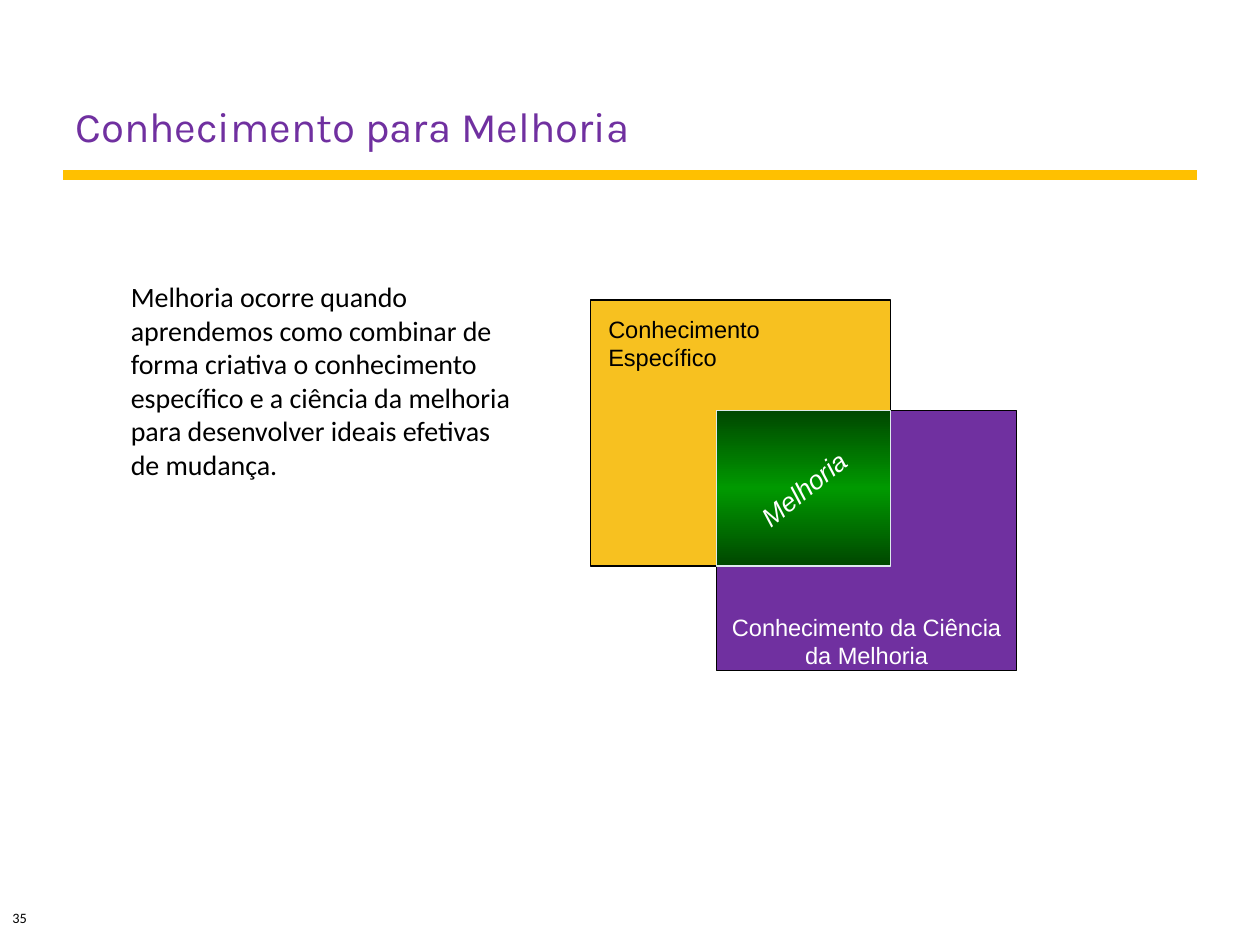
from copy import deepcopy
from dataclasses import dataclass
from typing import Optional

from lxml import etree
from pptx import Presentation
from pptx.dml.color import RGBColor
from pptx.enum.shapes import MSO_CONNECTOR, MSO_SHAPE
from pptx.enum.text import MSO_ANCHOR as Anchor, PP_ALIGN as Align
from pptx.oxml.ns import qn
from pptx.util import Pt

BLACK = RGBColor(0x00, 0x00, 0x00)
WHITE = RGBColor(0xFF, 0xFF, 0xFF)
PURPLE = RGBColor(0x70, 0x30, 0xA0)
AMBER = RGBColor(0xFF, 0xC0, 0x00)
YELLOW = RGBColor(0xF7, 0xC1, 0x20)
DARK_GREEN = RGBColor(0x00, 0x47, 0x00)
GREEN = RGBColor(0x00, 0x99, 0x00)
PALE = RGBColor(0xDD, 0xE9, 0xEC)


@dataclass(frozen=True)
class Box:
    left: float
    top: float
    width: float
    height: float

    def lengths(self) -> tuple:
        return Pt(self.left), Pt(self.top), Pt(self.width), Pt(self.height)

    def overlap(self, other: "Box") -> "Box":
        left, top = max(self.left, other.left), max(self.top, other.top)
        right = min(self.left + self.width, other.left + other.width)
        bottom = min(self.top + self.height, other.top + other.height)
        return Box(left, top, right - left, bottom - top)


@dataclass(frozen=True)
class Label:
    text: str
    box: Box
    size: float
    font: str
    color: RGBColor
    align: Align = Align.LEFT
    anchor: Anchor = Anchor.TOP
    italic: bool = False
    rotation: float = 0


def add_label(slide, label: Label) -> None:
    shape = slide.shapes.add_textbox(*label.box.lengths())
    shape.rotation = label.rotation
    frame = shape.text_frame
    frame.word_wrap = True
    frame.vertical_anchor = label.anchor
    frame.text = label.text
    paragraph = frame.paragraphs[0]
    paragraph.alignment = label.align
    font = paragraph.runs[0].font
    font.name, font.size, font.italic = label.font, Pt(label.size), label.italic
    font.color.rgb = label.color


def add_rectangle(slide, box: Box, line: RGBColor, fill: Optional[RGBColor] = None):
    shape = slide.shapes.add_shape(MSO_SHAPE.RECTANGLE, *box.lengths())
    shape.shadow.inherit = False
    if fill is not None:
        shape.fill.solid()
        shape.fill.fore_color.rgb = fill
    shape.line.color.rgb = line
    shape.line.width = Pt(0.75)
    return shape


def set_banded_gradient(shape, edge: RGBColor, middle: RGBColor) -> None:
    """Vertical gradient: edge colour, middle colour, edge colour."""
    shape.fill.gradient()
    shape.fill.gradient_angle = 90
    first, second = shape.fill.gradient_stops
    first.position, second.position = 0, 0.5
    first.color.rgb, second.color.rgb = edge, middle
    stop_list = shape.fill._xPr.find(qn("a:gradFill")).find(qn("a:gsLst"))
    last = deepcopy(stop_list[0])
    last.set("pos", "100000")
    stop_list.append(last)


def add_rule(slide, left: float, right: float, top: float) -> None:
    rule = slide.shapes.add_connector(
        MSO_CONNECTOR.STRAIGHT, Pt(left), Pt(top), Pt(right), Pt(top))
    rule.line.color.rgb = AMBER
    rule.line.width = Pt(6)
    etree.SubElement(rule._element.spPr, qn("a:effectLst"))


SPECIFIC = Box(337.5, 171.5, 171.5, 152)
SCIENCE = Box(409.5, 234.5, 171.5, 148.5)
SHARED = SPECIFIC.overlap(SCIENCE)

FRAME_LABELS = [
    Label("35", Box(0, 516, 41, 17.5), 8.2, "Calibri", BLACK),
    Label("Conhecimento para Melhoria", Box(36, 18, 648, 72), 24, "Karla", PURPLE,
          anchor=Anchor.BOTTOM),
    Label("Melhoria ocorre quando aprendemos como combinar de forma criativa "
          "o conhecimento específico e a ciência da melhoria para desenvolver "
          "ideais efetivas de mudança.",
          Box(67.7, 156.2, 237, 229.7), 16, "Calibri", BLACK),
]
DIAGRAM_LABELS = [
    Label("Conhecimento da Ciência da Melhoria",
          Box(SCIENCE.left, 346.5, SCIENCE.width, 40), 13.5, "Arial", WHITE,
          align=Align.CENTER),
    Label("Conhecimento Específico", Box(340.5, 176.4, 152.6, 40), 13.5, "Arial", BLACK),
    Label("Melhoria", Box(405.5, 266.5, 107.3, 25.2), 15, "Arial", WHITE,
          align=Align.CENTER, italic=True, rotation=321.1),
]


def main() -> None:
    presentation = Presentation()
    presentation.slide_width, presentation.slide_height = Pt(720), Pt(540)
    slide = presentation.slides.add_slide(presentation.slide_layouts[6])

    # Rule, page number, title and statement
    add_rule(slide, 36, 684, 100)
    for label in FRAME_LABELS:
        add_label(slide, label)

    # Two kinds of knowledge and the improvement where they meet
    add_rectangle(slide, SPECIFIC, BLACK, YELLOW)
    add_rectangle(slide, SCIENCE, BLACK, PURPLE)
    improvement = add_rectangle(slide, SHARED, PALE)
    set_banded_gradient(improvement, DARK_GREEN, GREEN)
    for label in DIAGRAM_LABELS:
        add_label(slide, label)

    presentation.save("out.pptx")


if __name__ == "__main__":
    main()
